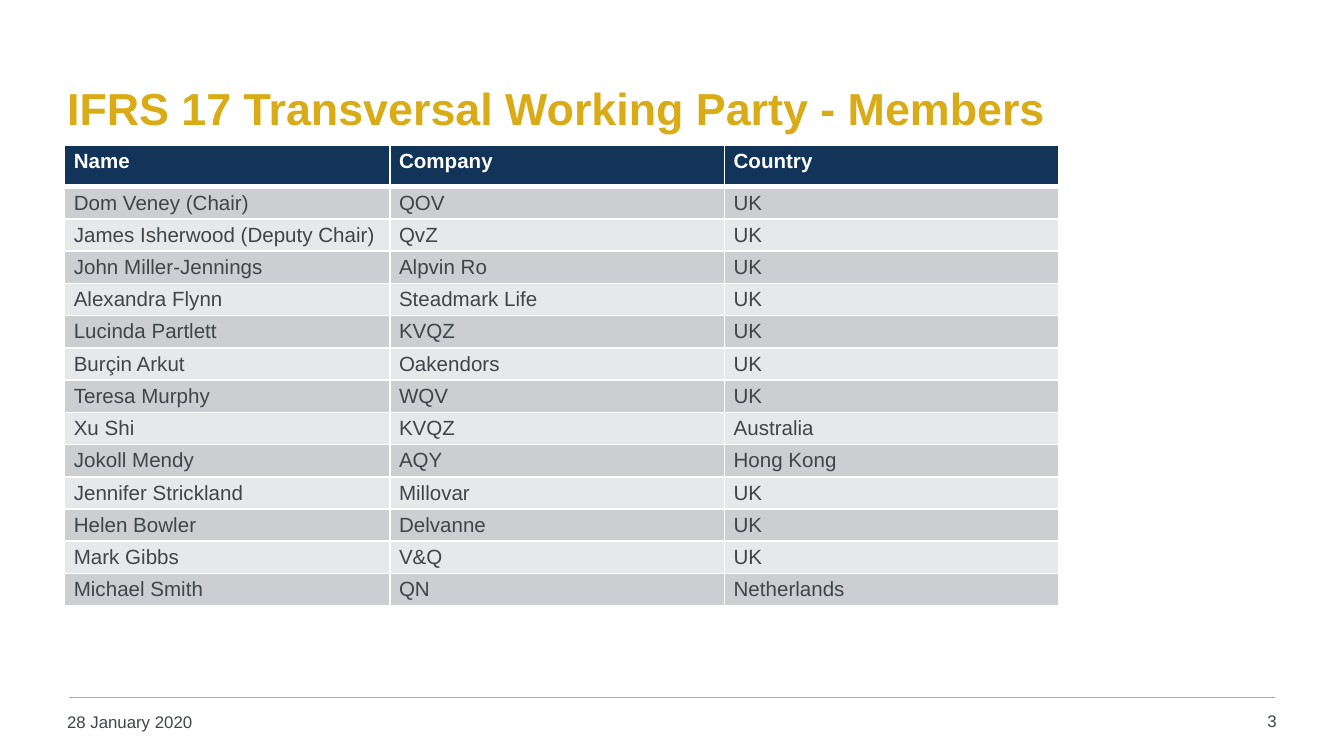
from typing import NamedTuple

from lxml.etree import SubElement
from pptx import Presentation
from pptx.dml.color import RGBColor
from pptx.enum.shapes import MSO_CONNECTOR as Connector
from pptx.enum.text import MSO_ANCHOR as Anchor, MSO_AUTO_SIZE as AutoSize, PP_ALIGN as Align
from pptx.oxml.ns import qn
from pptx.util import Inches, Pt

GOLD, NAVY, GREY, WHITE = "D9AB16", "113458", "3F4548", "FFFFFF"
BANDS = ("CCCED1", "E7E8EA")
UNIT = Inches(0.1)  # one column or row of the slide grid
SLIDE_COLUMNS, SLIDE_ROWS = 100, 56.25
MARGINS = {"margin_left": Pt(5), "margin_right": Pt(5),
           "margin_top": Pt(2.5), "margin_bottom": Pt(2.5)}


class Box(NamedTuple):
    """Place and size in grid columns and rows."""
    column: float
    row: float
    columns: float
    rows: float


class TextStyle(NamedTuple):
    size: float
    color: str
    bold: bool = False
    align: Align = Align.LEFT
    anchor: Anchor = Anchor.TOP


class Member(NamedTuple):
    name: str
    company: str
    country: str = "UK"


TITLE_STYLE = TextStyle(24, GOLD, bold=True, anchor=Anchor.MIDDLE)
HEADER_STYLE = TextStyle(11, WHITE, bold=True)
MEMBER_STYLE = TextStyle(11, GREY)
DATE_STYLE = TextStyle(9, GREY)
NUMBER_STYLE = TextStyle(9, GREY, align=Align.RIGHT)

HEADER = Member("Name", "Company", "Country")
MEMBERS = [
    Member("Dom Veney (Chair)", "QOV"),
    Member("James Isherwood (Deputy Chair)", "QvZ"),
    Member("John Miller-Jennings", "Alpvin Ro"),
    Member("Alexandra Flynn", "Steadmark Life"),
    Member("Lucinda Partlett", "KVQZ"),
    Member("Burçin Arkut", "Oakendors"),
    Member("Teresa Murphy", "WQV"),
    Member("Xu Shi", "KVQZ", "Australia"),
    Member("Jokoll Mendy", "AQY", "Hong Kong"),
    Member("Jennifer Strickland", "Millovar"),
    Member("Helen Bowler", "Delvanne"),
    Member("Mark Gibbs", "V&Q"),
    Member("Michael Smith", "QN", "Netherlands"),
]
TABLE_COLUMNS = (24.2, 24.9, 24.9)
HEADER_ROWS, MEMBER_ROWS = 3.1, 2.3


def grid(steps: float) -> int:
    return round(steps * UNIT)


def color(hex_string: str) -> RGBColor:
    return RGBColor.from_string(hex_string)


def set_values(target, values: dict) -> None:
    for name, value in values.items():
        setattr(target, name, value)


def write(frame, text: str, style: TextStyle) -> None:
    frame.text = text
    paragraph = frame.paragraphs[0]
    paragraph.alignment = style.align
    font = paragraph.runs[0].font
    set_values(font, {"name": "Arial", "size": Pt(style.size), "bold": style.bold})
    font.color.rgb = color(style.color)


def fill_text_shape(shape, box: Box, text: str, style: TextStyle) -> None:
    set_values(shape, dict(zip(("left", "top", "width", "height"), map(grid, box))))
    set_values(shape.text_frame, {"word_wrap": True, "auto_size": AutoSize.NONE,
                                  "vertical_anchor": style.anchor, **MARGINS})
    write(shape.text_frame, text, style)


def add_text(slide, box: Box, text: str, style: TextStyle) -> None:
    fill_text_shape(slide.shapes.add_textbox(*map(grid, box)), box, text, style)


def add_rule(slide, left: float, right: float, row: float) -> None:
    rule = slide.shapes.add_connector(Connector.STRAIGHT, *map(grid, (left, row, right, row)))
    rule.line.color.rgb = color(GOLD)
    rule.line.width = Pt(1)
    SubElement(rule._element.spPr, qn("a:effectLst"))


def add_borders(cell, top: float, bottom: float) -> None:
    """White cell edges, with widths in points; must precede the cell's fill."""
    properties = cell._tc.get_or_add_tcPr()
    for side, width in {"L": 1, "R": 1, "T": top, "B": bottom}.items():
        edge = SubElement(properties, qn(f"a:ln{side}"), w=str(Pt(width)))
        SubElement(SubElement(edge, qn("a:solidFill")), qn("a:srgbClr"), val=WHITE)


def add_member_table(slide, column: float, row: float) -> None:
    records = [HEADER, *MEMBERS]
    box = Box(column, row, sum(TABLE_COLUMNS), HEADER_ROWS + MEMBER_ROWS * len(MEMBERS))
    table = slide.shapes.add_table(len(records), len(TABLE_COLUMNS), *map(grid, box)).table
    for table_column, width in zip(table.columns, TABLE_COLUMNS):
        table_column.width = grid(width)
    for index, record in enumerate(records):
        is_header = index == 0
        table.rows[index].height = grid(HEADER_ROWS if is_header else MEMBER_ROWS)
        for cell, text in zip(table.rows[index].cells, record):
            set_values(cell, MARGINS)
            add_borders(cell, top=3 if index == 1 else 1, bottom=3 if is_header else 1)
            cell.fill.solid()
            cell.fill.fore_color.rgb = color(NAVY if is_header else BANDS[(index - 1) % 2])
            write(cell.text_frame, text, HEADER_STYLE if is_header else MEMBER_STYLE)


def main() -> None:
    presentation = Presentation()
    presentation.slide_width = grid(SLIDE_COLUMNS)
    presentation.slide_height = grid(SLIDE_ROWS)
    slide = presentation.slides.add_slide(presentation.slide_layouts[5])
    add_rule(slide, 5.1, 94.9, 51.9)
    fill_text_shape(slide.shapes.title, Box(4.3, 3.3, 90.7, 9.4),
                    "IFRS 17 Transversal Working Party - Members", TITLE_STYLE)
    add_text(slide, Box(4.3, 52.6, 22, 2.7), "28 January 2020", DATE_STYLE)
    add_text(slide, Box(88.6, 52.5, 7.1, 2.8), "3", NUMBER_STYLE)
    add_member_table(slide, 4.8, 10.8)
    presentation.save("out.pptx")


if __name__ == "__main__":
    main()
